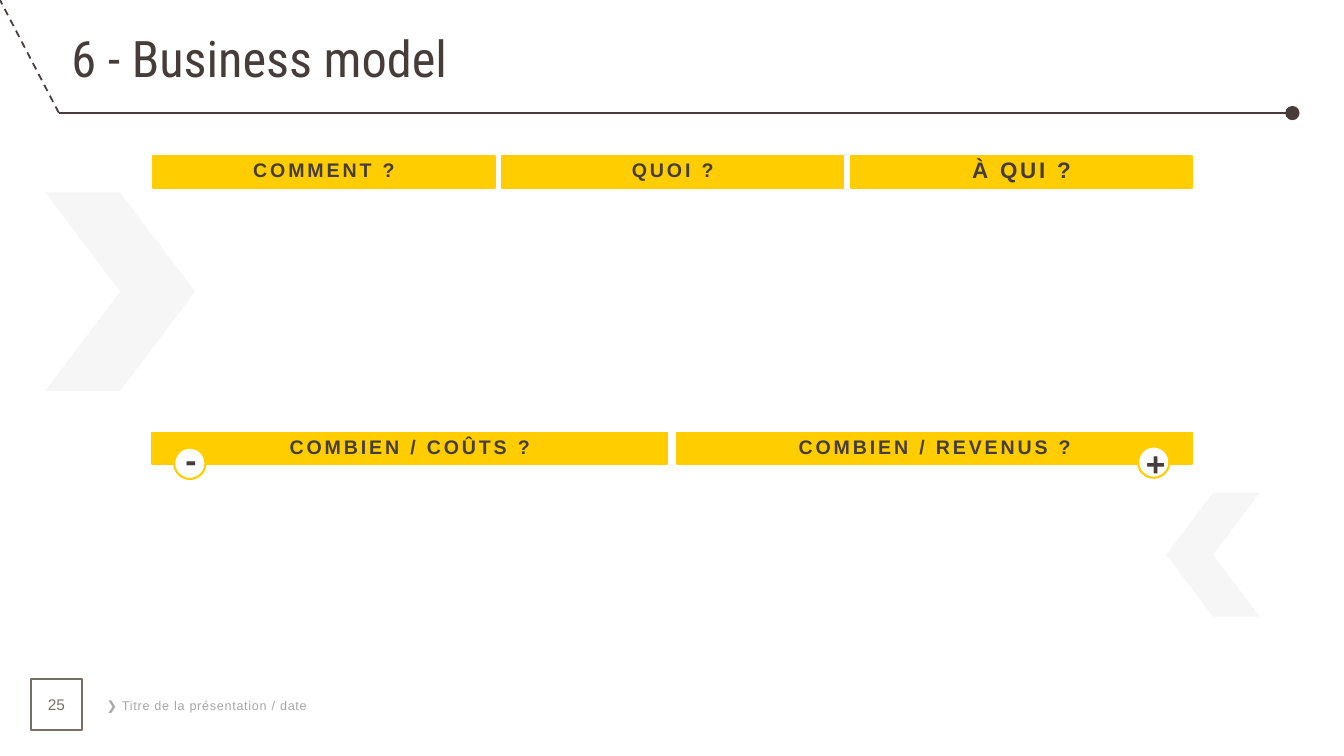
from lxml import etree
from pptx import Presentation
from pptx.dml.color import RGBColor
from pptx.enum import dml, shapes, text
from pptx.oxml import ns
from pptx.util import Cm, Pt

DARK, YELLOW, TAUPE, WHITE = "463D3A", "FFCD00", "786E64", "FFFFFF"
LEFT, CENTER = text.PP_ALIGN.LEFT, text.PP_ALIGN.CENTER
TOP, MIDDLE = text.MSO_ANCHOR.TOP, text.MSO_ANCHOR.MIDDLE
HEADING = {"line_spacing": 0.85, "space_after": Pt(9)}

presentation = Presentation()
presentation.slide_width, presentation.slide_height = Cm(33.87), Cm(19.05)
slide = presentation.slides.add_slide(presentation.slide_layouts[6])


def add_shape(kind, box, fill=None, line=None, width=1.25):
    shape = slide.shapes.add_shape(kind, *map(Cm, box))
    shape.shadow.inherit = False
    for color, part in ((fill, shape.fill), (line, shape.line.fill)):
        if color:
            part.solid()
            part.fore_color.rgb = RGBColor.from_string(color)
        else:
            part.background()
    if line:
        shape.line.width = Pt(width)
    return shape


def write(shape, words, size, color=DARK, name="Arial", bold=False, spacing=0,
          align=CENTER, anchor=MIDDLE, layout={}):
    frame = shape.text_frame
    frame.word_wrap = True
    frame.vertical_anchor = anchor
    paragraph = frame.paragraphs[0]
    for key, value in {"alignment": align, **layout}.items():
        setattr(paragraph, key, value)
    run = paragraph.add_run()
    run.text = words
    for key, value in {"size": Pt(size), "name": name, "bold": bold}.items():
        setattr(run.font, key, value)
    run.font.color.rgb = RGBColor.from_string(color)
    if spacing:
        run.font._element.set("spc", str(int(spacing * 100)))


# Pale chevrons pointing inwards
for box, flipped in (((29.39, 12.42, 2.36, 3.12), True),
                     ((1.14, 4.85, 3.78, 5), False)):
    chevron = add_shape(shapes.MSO_SHAPE.CHEVRON, box, "D9D9D9")
    color = chevron._element.spPr.find(".//" + ns.qn("a:srgbClr"))
    etree.SubElement(color, ns.qn("a:alpha"), val="21000")
    if flipped:
        chevron._element.spPr.find(ns.qn("a:xfrm")).set("flipH", "1")

# Title rule with its dashed slope and end dot
for ends, dash in (((32.56, 2.84, 1.48, 2.84), None),
                   ((1.48, 2.84, 0, 0), dml.MSO_LINE.DASH)):
    rule = slide.shapes.add_connector(shapes.MSO_CONNECTOR.STRAIGHT, *map(Cm, ends))
    rule.line.color.rgb = RGBColor.from_string(DARK)
    rule.line.width = Pt(1.25)
    rule.line.dash_style = dash
    etree.SubElement(rule._element.spPr, ns.qn("a:effectLst"))
add_shape(shapes.MSO_SHAPE.OVAL, (32.39, 2.67, 0.36, 0.36), DARK)

# Title
title = slide.shapes.add_textbox(Cm(1.55), Cm(0.69), Cm(30.66), Cm(1.73))
write(title, "6 - Business model", 36, name="Roboto Condensed", align=LEFT,
      layout=HEADING)

# Heading bars, one row at a time
rows = (
    (3.86, 3.94, 8.61, 8.79, (("COMMENT ?", 14), ("QUOI ?", 14), ("À QUI ?", 16))),
    (3.84, 10.9, 12.98, 13.23, (("COMBIEN / COÛTS ?", 14), ("COMBIEN / REVENUS ?", 14))),
)
for left, top, width, pitch, headings in rows:
    for column, (heading, size) in enumerate(headings):
        bar = add_shape(shapes.MSO_SHAPE.RECTANGLE,
                        (left + column * pitch, top, width, 0.79), YELLOW, YELLOW)
        write(bar, heading, size, bold=True, spacing=2, layout=HEADING)

# Cost and revenue signs
for sign, disc_left, disc_top, sign_left, sign_top in (
        ("+", 28.68, 11.25, 28.4, 11.18), ("-", 4.39, 11.28, 4.09, 11.1)):
    add_shape(shapes.MSO_SHAPE.OVAL, (disc_left, disc_top, 0.79, 0.79),
              WHITE, YELLOW, 1.5)
    label = slide.shapes.add_textbox(Cm(sign_left), Cm(sign_top), Cm(1.45), Cm(1.12))
    write(label, sign, 24, bold=True, spacing=2, anchor=TOP, layout=HEADING)

# Footer
footer = slide.shapes.add_textbox(Cm(2.44), Cm(17.45), Cm(7.04), Cm(0.64))
write(footer, "❯ Titre de la présentation / date", 9, "A6A6A6", spacing=0.5,
      align=LEFT, anchor=TOP)
page = add_shape(shapes.MSO_SHAPE.RECTANGLE, (0.79, 17.12, 1.27, 1.27), line=TAUPE)
page.text_frame.margin_left = page.text_frame.margin_right = 0
write(page, "25", 11, TAUPE)

presentation.save("out.pptx")
